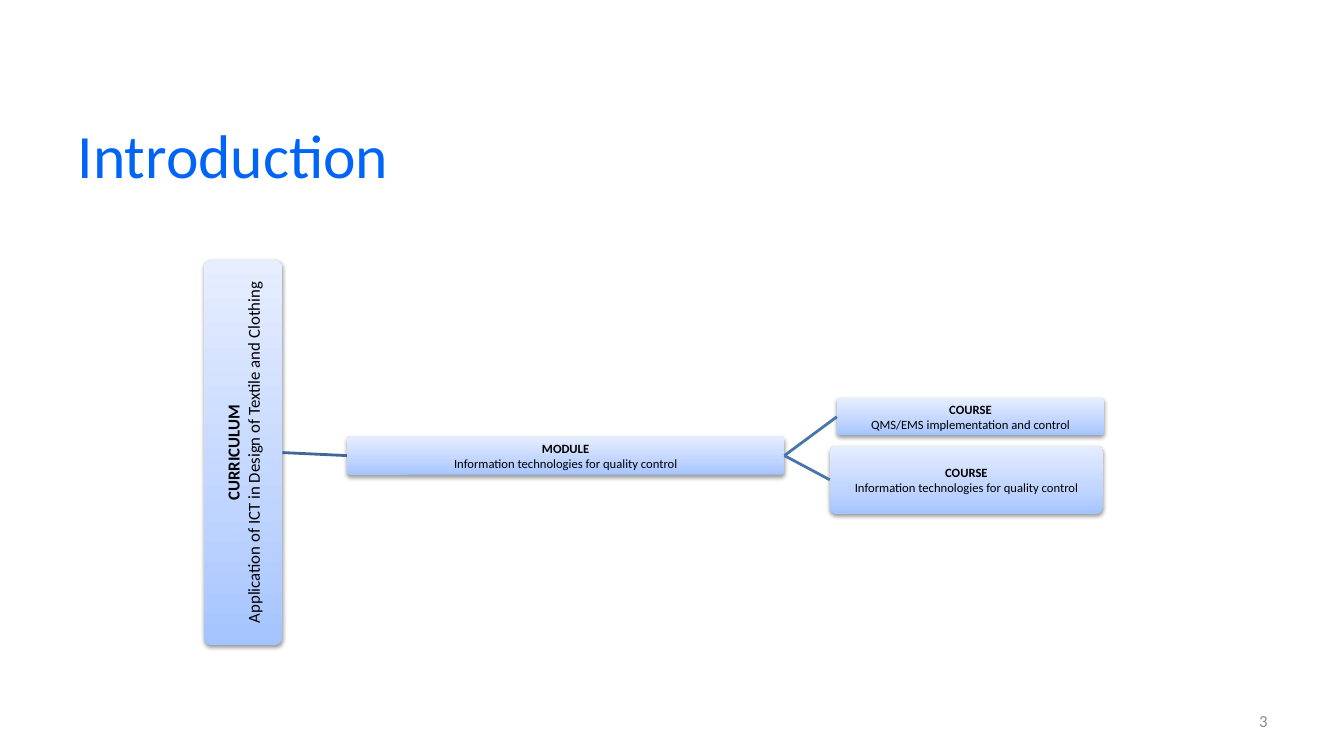
import copy

import lxml.etree
import pptx
import pptx.dml.color
import pptx.enum.shapes
import pptx.enum.text
import pptx.oxml.ns
import pptx.util
from pptx.util import Inches

qn = pptx.oxml.ns.qn
ALIGN = pptx.enum.text.PP_ALIGN
MIDDLE = pptx.enum.text.MSO_ANCHOR.MIDDLE
GRADIENT = [(0, "A4C4FF"), (0.35, "BFD4FF"), (1, "E6EEFF")]


def color(value):
    """Return the colour of a hex string."""
    return pptx.dml.color.RGBColor.from_string(value)


def format_paragraph(paragraph, size, value, align, bold=False):
    """Set the alignment and font of a paragraph's runs."""
    paragraph.alignment = align
    for run in paragraph.runs:
        run.font.name = "Calibri"
        run.font.size = pptx.util.Pt(size)
        run.font.bold = bold
        run.font.color.rgb = color(value)


def fill_gradient(shape):
    """Fill a shape with the light blue gradient, darkest at the bottom."""
    shape.fill.gradient()
    shape.fill.gradient_angle = 90
    stop_list = shape._element.spPr.find(".//" + qn("a:gsLst"))
    stop_list.append(copy.deepcopy(stop_list[-1]))
    for stop, (position, value) in zip(shape.fill.gradient_stops, GRADIENT):
        stop.position = position
        stop.color.rgb = color(value)


def add_shadow(shape):
    """Give a shape a soft shadow below it."""
    shape.shadow.inherit = False
    effects = shape._element.spPr.find(qn("a:effectLst"))
    shadow = lxml.etree.SubElement(effects, qn("a:outerShdw"), blurRad="39370",
                                   dist="20320", dir="5400000", rotWithShape="0")
    black = lxml.etree.SubElement(shadow, qn("a:srgbClr"), val="000000")
    lxml.etree.SubElement(black, qn("a:alpha"), val="38000")


def add_node(slide, box, heading, name, size=9, vertical=False):
    """Add a rounded box with a bold heading above a name."""
    shape = slide.shapes.add_shape(pptx.enum.shapes.MSO_SHAPE.ROUNDED_RECTANGLE,
                                   *map(Inches, box))
    shape.adjustments[0] = 0.1
    fill_gradient(shape)
    shape.line.fill.background()
    add_shadow(shape)
    frame = shape.text_frame
    frame.word_wrap = True
    frame.vertical_anchor = MIDDLE
    frame.margin_left = frame.margin_right = Inches(0.02)
    frame.margin_top = frame.margin_bottom = Inches(0.02)
    if vertical:
        frame._txBody.bodyPr.set("vert", "vert270")
    frame.text = f"{heading}\n{name}"
    for paragraph, bold in zip(frame.paragraphs, (True, False)):
        format_paragraph(paragraph, size, "000000", ALIGN.CENTER, bold)
    return shape


def add_link(slide, parent, child, value):
    """Join the right side of a parent to the left side of a child."""
    connector = slide.shapes.add_connector(pptx.enum.shapes.MSO_CONNECTOR.STRAIGHT, 0, 0, 0, 0)
    connector.begin_connect(parent, 3)
    connector.end_connect(child, 1)
    connector.line.color.rgb = color(value)
    connector.line.width = pptx.util.Pt(2)
    lxml.etree.SubElement(connector._element.spPr, qn("a:effectLst"))


def add_tree(slide, left, top):
    """Add the curriculum tree with its top left corner at the given point."""
    curriculum = add_node(slide, (left, top, 0.78, 3.82), "CURRICULUM",
                          "Application of ICT in Design of Textile and Clothing", 12, True)
    module = add_node(slide, (left + 1.42, top + 1.75, 4.34, 0.38), "MODULE",
                      "Information technologies for quality control")
    add_link(slide, curriculum, module, "3F6797")
    courses = [((left + 6.28, top + 1.37, 2.65, 0.37), "QMS/EMS implementation and control"),
               ((left + 6.21, top + 1.84, 2.71, 0.68),
                "Information technologies for quality control")]
    for box, name in courses:
        add_link(slide, module, add_node(slide, box, "COURSE", name), "4875AC")


def add_title(slide, box, text):
    """Place and format the slide title."""
    title = slide.shapes.title
    title.left, title.top, title.width, title.height = map(Inches, box)
    title.text_frame.text = text
    title.text_frame.vertical_anchor = MIDDLE
    format_paragraph(title.text_frame.paragraphs[0], 44, "0064F6", ALIGN.LEFT)


def add_slide_number(slide, box, number):
    """Add the slide number at the right of its box."""
    frame = slide.shapes.add_textbox(*map(Inches, box)).text_frame
    frame.word_wrap = True
    frame.vertical_anchor = MIDDLE
    frame.text = number
    format_paragraph(frame.paragraphs[0], 12, "898989", ALIGN.RIGHT)


def main():
    """Build and save the presentation."""
    presentation = pptx.Presentation()
    presentation.slide_width = Inches(13.33)
    presentation.slide_height = Inches(7.5)
    slide = presentation.slides.add_slide(presentation.slide_layouts[5])
    add_title(slide, (0.67, 0.97, 12, 1.12), "Introduction")
    add_tree(slide, 2.02, 2.58)
    add_slide_number(slide, (9.56, 6.95, 3.11, 0.4), "3")
    presentation.save("out.pptx")


if __name__ == "__main__":
    main()
